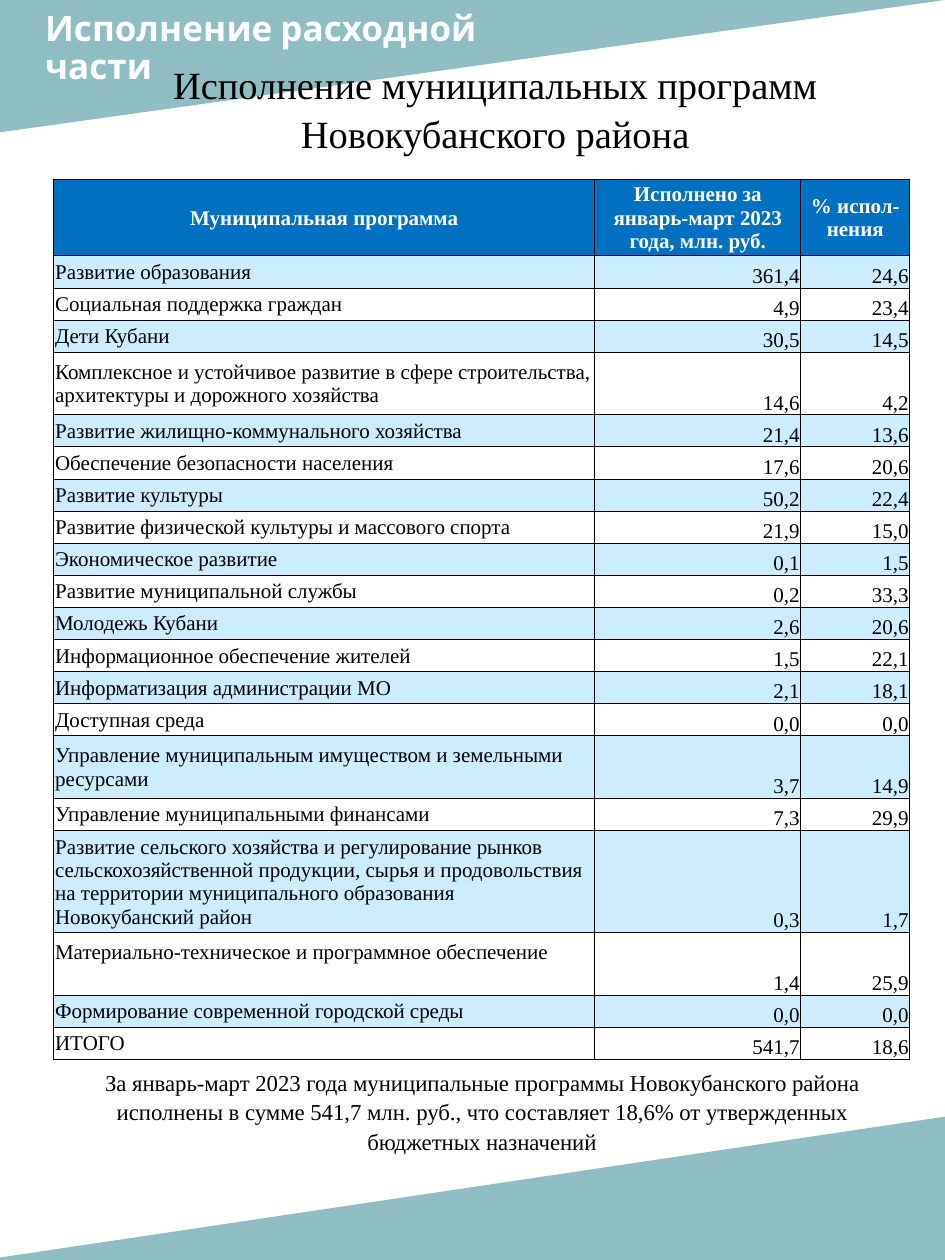
from dataclasses import dataclass
from typing import NamedTuple

from lxml import etree
from pptx import Presentation
from pptx.dml.color import RGBColor
from pptx.enum.shapes import MSO_SHAPE
from pptx.enum.text import MSO_ANCHOR, PP_ALIGN
from pptx.oxml.ns import qn
from pptx.util import Inches, Pt

LEFT, MID, RIGHT = PP_ALIGN.LEFT, PP_ALIGN.CENTER, PP_ALIGN.RIGHT
CENTER, BOTTOM = MSO_ANCHOR.MIDDLE, MSO_ANCHOR.BOTTOM
WEDGE = MSO_SHAPE.RIGHT_TRIANGLE
WIDE, HIGH = Inches(7.5), Inches(10)


@dataclass(frozen=True)
class Theme:
    teal: str = "519AA0"
    blue: str = "0070C0"
    pale: str = "CCECFF"
    white: str = "FFFFFF"
    black: str = "000000"
    serif: str = "Times New Roman"
    sans: str = "Cabin"
    head: int = 20
    title: int = 22
    note: int = 13
    body: int = 12
    rule: float = 0.5


class Box(NamedTuple):
    """Left, top, width and height in percent of the slide."""
    x: float
    y: float
    w: float
    h: float


class Line(NamedTuple):
    """A programme; high is its row height in percent of the slide."""
    name: str
    sum: str
    rate: str
    high: float = 2.55
    foot: float = 0


THEME = Theme()
COLS = (57.25, 21.8, 11.53)
TOP = Line("Муниципальная программа",
           "Исполнено за январь-март 2023 года, млн. руб.",
           "% испол-нения", 6.03)
LINES = (
    Line("Развитие образования", "361,4", "24,6"),
    Line("Социальная поддержка граждан", "4,9", "23,4"),
    Line("Дети Кубани", "30,5", "14,5"),
    Line("Комплексное и устойчивое развитие в сфере строительства, "
         "архитектуры и дорожного хозяйства", "14,6", "4,2", 4.97),
    Line("Развитие жилищно-коммунального хозяйства", "21,4", "13,6"),
    Line("Обеспечение безопасности населения", "17,6", "20,6"),
    Line("Развитие культуры", "50,2", "22,4"),
    Line("Развитие физической культуры и массового спорта", "21,9", "15,0"),
    Line("Экономическое развитие", "0,1", "1,5"),
    Line("Развитие муниципальной службы", "0,2", "33,3"),
    Line("Молодежь Кубани", "2,6", "20,6"),
    Line("Информационное обеспечение жителей", "1,5", "22,1"),
    Line("Информатизация администрации МО", "2,1", "18,1"),
    Line("Доступная среда", "0,0", "0,0"),
    Line("Управление муниципальным имуществом и земельными ресурсами",
         "3,7", "14,9", 4.97),
    Line("Управление муниципальными финансами", "7,3", "29,9"),
    Line("Развитие сельского хозяйства и регулирование рынков "
         "сельскохозяйственной продукции, сырья и продовольствия на территории "
         "муниципального образования Новокубанский район", "0,3", "1,7", 8.1),
    Line("Материально-техническое и программное обеспечение",
         "1,4", "25,9", 4.97, foot=1.9),
    Line("Формирование современной городской среды", "0,0", "0,0"),
    Line("ИТОГО", "541,7", "18,6"),
)


def across(share: float) -> int:
    return int(WIDE * share / 100)


def down(share: float) -> int:
    return int(HIGH * share / 100)


def place(box: Box) -> tuple[int, int, int, int]:
    return across(box.x), down(box.y), across(box.w), down(box.h)


def color(code: str) -> RGBColor:
    return RGBColor.from_string(code)


def write(frame, *texts: str, size: int, font: str = THEME.serif,
          ink: str = THEME.black, bold: bool = False,
          align: PP_ALIGN = LEFT, space: float = 1.0) -> None:
    """Fill a text frame with one paragraph for each text."""
    frame.word_wrap = True
    for i, text in enumerate(texts):
        para = frame.add_paragraph() if i else frame.paragraphs[0]
        para.alignment, para.line_spacing = align, space
        run = para.add_run()
        run.text = text
        run.font.size, run.font.name, run.font.bold = Pt(size), font, bold
        run.font.color.rgb = color(ink)


def label(slide, box: Box, *texts: str, **style) -> None:
    write(slide.shapes.add_textbox(*place(box)).text_frame, *texts, **style)


def wedge(slide, box: Box, flip: str) -> None:
    """Draw a see-through corner, turned half round and mirrored."""
    shape = slide.shapes.add_shape(WEDGE, *place(box))
    shape.shadow.inherit = False
    shape.rotation = 180
    shape.fill.solid()
    shape.fill.fore_color.rgb = color(THEME.teal)
    shape.line.fill.background()
    props = shape.element.spPr
    props.find(qn("a:xfrm")).set(flip, "1")
    tint = props.find(qn("a:solidFill")).find(qn("a:srgbClr"))
    etree.SubElement(tint, qn("a:alpha")).set("val", "64000")


def edge(cell) -> None:
    """Rule all four sides; borders must come before the fill."""
    props = cell._tc.get_or_add_tcPr()
    for i, side in enumerate(("lnL", "lnR", "lnT", "lnB")):
        line = etree.Element(qn(f"a:{side}"), w=str(Pt(THEME.rule)))
        fill = etree.SubElement(line, qn("a:solidFill"))
        etree.SubElement(fill, qn("a:srgbClr"), val=THEME.black)
        props.insert(i, line)


def draw(cell, text: str, fill: str, anchor: MSO_ANCHOR, foot: float,
         **style) -> None:
    cell.fill.solid()
    cell.fill.fore_color.rgb = color(fill)
    cell.vertical_anchor = anchor
    cell.margin_left = cell.margin_right = cell.margin_top = Inches(0.01)
    cell.margin_bottom = down(foot)
    write(cell.text_frame, text, size=THEME.body, **style)
    edge(cell)


def grid(slide, x: float, y: float) -> None:
    rows = (TOP, *LINES)
    box = Box(x, y, sum(COLS), sum(row.high for row in rows))
    table = slide.shapes.add_table(len(rows), len(COLS), *place(box)).table
    for col, wide in zip(table.columns, COLS):
        col.width = across(wide)
    for r, row in enumerate(rows):
        table.rows[r].height = down(row.high)
        fill = THEME.pale if r % 2 else THEME.white
        for c, text in enumerate((row.name, row.sum, row.rate)):
            cell = table.cell(r, c)
            if r == 0:
                draw(cell, text, THEME.blue, CENTER, 0,
                     ink=THEME.white, bold=True, align=MID)
            elif c == 0:
                draw(cell, text, fill, CENTER, row.foot)
            else:
                draw(cell, text, fill, BOTTOM, 0, align=RIGHT)


def main() -> None:
    deck = Presentation()
    deck.slide_width, deck.slide_height = WIDE, HIGH
    slide = deck.slides.add_slide(deck.slide_layouts[6])
    wedge(slide, Box(0, 0, 100, 10.5), "flipH")
    wedge(slide, Box(-1.73, 88.6, 102, 11.4), "flipV")
    label(slide, Box(3.47, 0.4, 64.93, 7.7), "Исполнение расходной", "части",
          size=THEME.head, font=THEME.sans, ink=THEME.white, bold=True,
          space=0.9)
    label(slide, Box(8.53, 4.1, 87.73, 8.3),
          "Исполнение муниципальных программ Новокубанского района",
          size=THEME.title, align=MID, space=1.07)
    label(slide, Box(5.73, 84.2, 90.53, 7.6),
          "За январь-март 2023 года муниципальные программы Новокубанского "
          "района исполнены в сумме 541,7 млн. руб., что составляет 18,6% от "
          "утвержденных бюджетных назначений",
          size=THEME.note, align=MID, space=1.07)
    grid(slide, 5.7, 14.2)
    deck.save("out.pptx")


if __name__ == "__main__":
    main()
